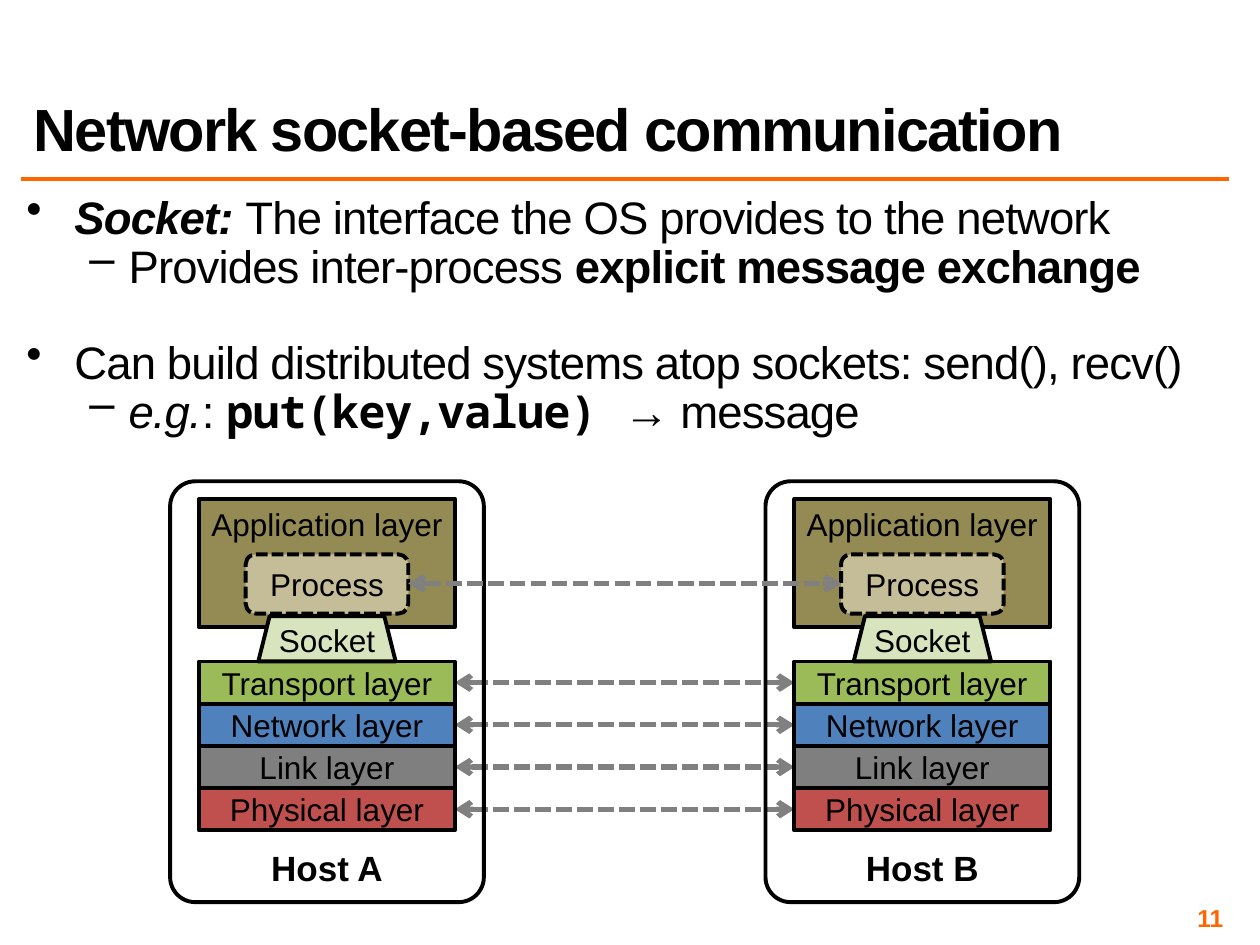
from lxml import etree
from pptx import Presentation
from pptx.dml.color import RGBColor
from pptx.enum.dml import MSO_LINE as Dash
from pptx.enum.shapes import MSO_CONNECTOR as Conn, MSO_SHAPE as Shape
from pptx.enum.text import MSO_ANCHOR as Anchor, PP_ALIGN as Align
from pptx.oxml.ns import qn
from pptx.util import Inches, Pt

BLACK = RGBColor(0x00, 0x00, 0x00)
ORANGE = RGBColor(0xFF, 0x66, 0x00)
GRAY = RGBColor(0x80, 0x80, 0x80)
OLIVE = RGBColor(0x94, 0x8A, 0x54)
TAN = RGBColor(0xC4, 0xBD, 0x97)
MINT = RGBColor(0xD7, 0xE4, 0xBD)

LAYERS = [
    ("Transport layer", RGBColor(0x9B, 0xBB, 0x59)),
    ("Network layer", RGBColor(0x4F, 0x81, 0xBD)),
    ("Link layer", RGBColor(0x7F, 0x7F, 0x7F)),
    ("Physical layer", RGBColor(0xC0, 0x50, 0x4D)),
]
STACK_TOP, ROW = 5.25, 0.335
HOST_W, STACK_W, PROC_W, SOCK_W = 2.49, 2.03, 1.29, 1.09
MID_A, MID_B = 2.595, 7.32

# Level, space before in points, runs of (text, style)
BODY = [
    (0, 6, [("Socket: ", "bi"),
            ("The interface the OS provides to the network", "")]),
    (1, 6, [("Provides inter-process ", ""),
            ("explicit message exchange", "b")]),
    (0, 33, [("Can build distributed systems atop sockets: send(), recv()", "")]),
    (1, 6, [("e.g.", "i"), (": ", ""), ("put(key,value) ", "bm"),
            ("→ message", "")]),
]
INDENTS = [("•", 0.38, 0.38), ("–", 0.81, 0.31)]


def style(font, size, color=BLACK, bold=False):
    font.name, font.size, font.bold = "Arial", Pt(size), bold
    font.color.rgb = color


def track(run, gap):
    """Set letter spacing in points."""
    run.font._element.set("spc", str(int(gap * 100)))


def add_text(slide, box, anchor=Anchor.TOP, inset=0.04):
    frame = slide.shapes.add_textbox(*map(Inches, box)).text_frame
    frame.word_wrap, frame.vertical_anchor = True, anchor
    frame.margin_left = frame.margin_right = Inches(inset)
    frame.margin_top = frame.margin_bottom = Inches(0.04)
    return frame


def add_title(slide, text):
    frame = add_text(slide, (0.17, 0.17, 9.58, 1.17), Anchor.BOTTOM, 0.1)
    frame.margin_bottom = Inches(0.05)
    para = frame.paragraphs[0]
    para.line_spacing = 0.8
    style(para.font, 34, bold=True)
    run = para.add_run()
    run.text = text
    track(run, -1)


def set_bullet(para, level):
    char, left, hang = INDENTS[level]
    props = para._p.get_or_add_pPr()
    props.set("marL", str(Inches(left)))
    props.set("indent", str(-Inches(hang)))
    bullet = etree.Element(qn("a:buChar"), char=char)
    props.find(qn("a:defRPr")).addprevious(bullet)


def add_body(slide):
    frame = add_text(slide, (0.17, 1.58, 9.58, 2.11))
    for i, (level, before, runs) in enumerate(BODY):
        para = frame.add_paragraph() if i else frame.paragraphs[0]
        para.level, para.line_spacing = level, 0.7
        para.space_before = Pt(before)
        style(para.font, 26)
        set_bullet(para, level)
        for text, marks in runs:
            run = para.add_run()
            run.text = text
            style(run.font, 26, bold="b" in marks)
            run.font.italic = "i" in marks
            if "m" in marks:
                run.font.name = "Noto Sans Mono"
            track(run, -0.5)


def add_number(slide, text):
    frame = add_text(slide, (7.42, 7.17, 2.33, 0.23), Anchor.MIDDLE)
    para = frame.paragraphs[0]
    para.text, para.alignment = text, Align.RIGHT
    style(para.font, 14, ORANGE, True)


def add_line(slide, x1, y1, x2, y2, color, width):
    line = slide.shapes.add_connector(
        Conn.STRAIGHT, *map(Inches, (x1, y1, x2, y2)))
    line.line.color.rgb, line.line.width = color, Pt(width)
    etree.SubElement(line._element.spPr, qn("a:effectLst"))
    return line


def add_arrow(slide, x1, x2, y):
    """Add a dashed level line with a head at each end."""
    line = add_line(slide, x1, y, x2, y, GRAY, 3).line
    line.dash_style = Dash.SQUARE_DOT
    for end in ("a:headEnd", "a:tailEnd"):
        etree.SubElement(line._get_or_add_ln(), qn(end), type="arrow")


def add_box(slide, kind, mid, top, width, height, text, fill=None,
            anchor=Anchor.MIDDLE, size=18, bold=False):
    """Add a labelled shape centred on mid."""
    shape = slide.shapes.add_shape(
        kind, *map(Inches, (mid - width / 2, top, width, height)))
    shape.shadow.inherit = False
    if fill is None:
        shape.fill.background()
    else:
        shape.fill.solid()
        shape.fill.fore_color.rgb = fill
    shape.line.color.rgb, shape.line.width = BLACK, Pt(2.25)
    frame = shape.text_frame
    frame.word_wrap, frame.vertical_anchor = False, anchor
    para = frame.paragraphs[0]
    para.text, para.alignment = text, Align.CENTER
    style(para.font, size, bold=bold)
    return shape


def add_host(slide, mid, name):
    add_box(slide, Shape.RECTANGLE, mid, 3.96, STACK_W, 1.02,
            "Application layer", OLIVE, Anchor.TOP)
    for i, (text, fill) in enumerate(LAYERS):
        add_box(slide, Shape.RECTANGLE, mid, STACK_TOP + i * ROW,
                STACK_W, ROW, text, fill)
    frame = add_box(slide, Shape.ROUNDED_RECTANGLE, mid, 3.82, HOST_W, 3.34,
                    name, anchor=Anchor.BOTTOM, size=20, bold=True)
    frame.adjustments[0] = 0.08
    add_box(slide, Shape.TRAPEZOID, mid, 4.89, SOCK_W, 0.36, "Socket", MINT)
    proc = add_box(slide, Shape.FLOWCHART_ALTERNATE_PROCESS, mid, 4.4,
                   PROC_W, 0.47, "Process", TAN)
    proc.line.dash_style = Dash.SQUARE_DOT


def add_link(slide, width, y):
    """Join two facing boxes of the given width."""
    add_arrow(slide, MID_A + width / 2, MID_B - width / 2, y)


def main():
    deck = Presentation()
    deck.slide_width, deck.slide_height = Inches(10), Inches(7.5)
    slide = deck.slides.add_slide(deck.slide_layouts[6])
    add_line(slide, 0.17, 1.42, 9.75, 1.42, ORANGE, 2)
    add_body(slide)
    add_number(slide, "11")
    add_title(slide, "Network socket-based communication")
    for i in range(len(LAYERS)):
        add_link(slide, STACK_W, STACK_TOP + (i + 0.5) * ROW)
    add_host(slide, MID_A, "Host A")
    add_host(slide, MID_B, "Host B")
    add_link(slide, PROC_W, 4.63)
    deck.save("out.pptx")


if __name__ == "__main__":
    main()
